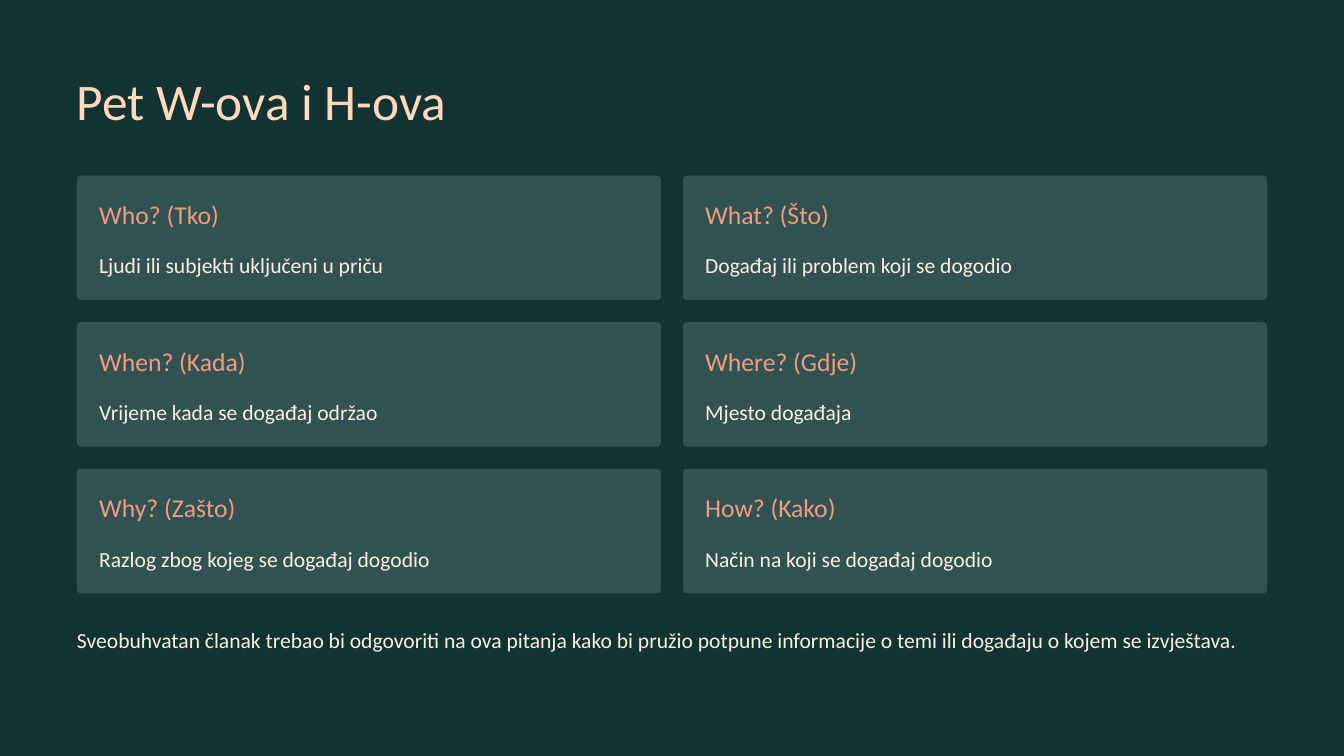
from collections import namedtuple

from pptx import Presentation
from pptx.dml.color import RGBColor
from pptx.enum.shapes import MSO_SHAPE
from pptx.util import Pt

Box = namedtuple("Box", "left top width height")

COLOURS = {
    "background": "123332",
    "card": "315251",
    "title": "FFD9BE",
    "heading": "EF9C82",
    "body": "F9EEE7",
}

FORMATS = {
    "title": {"size": Pt(44), "name": "Calibri"},
    "heading": {"size": Pt(22), "name": "Calibri"},
    "body": {"size": Pt(18.5), "name": "Calibri"},
}

LINE_HEIGHTS = {"title": 55, "heading": 27.5, "body": 30}

QUESTIONS = [
    ("Who? (Tko)", "Ljudi ili subjekti uključeni u priču"),
    ("What? (Što)", "Događaj ili problem koji se dogodio"),
    ("When? (Kada)", "Vrijeme kada se događaj održao"),
    ("Where? (Gdje)", "Mjesto događaja"),
    ("Why? (Zašto)", "Razlog zbog kojeg se događaj dogodio"),
    ("How? (Kako)", "Način na koji se događaj dogodio"),
]

SUMMARY = (
    "Sveobuhvatan članak trebao bi odgovoriti na ova pitanja kako bi pružio "
    "potpune informacije o temi ili događaju o kojem se izvještava."
)

COLUMNS = 2
GAP = 19
PADDING = 19


def colour(name):
    return RGBColor.from_string(COLOURS[name])


def in_points(box):
    return [Pt(length) for length in box]


def add_text(page, box, text, style, wrap=False):
    frame = page.shapes.add_textbox(*in_points(box)).text_frame
    for side in ("left", "top", "right", "bottom"):
        setattr(frame, f"margin_{side}", 0)
    frame.word_wrap = wrap
    para = frame.paragraphs[0]
    para.line_spacing = Pt(LINE_HEIGHTS[style])
    span = para.add_run()
    span.text = text
    for attribute, value in FORMATS[style].items():
        setattr(span.font, attribute, value)
    span.font.color.rgb = colour(style)


def add_card(page, box, heading, body):
    card = page.shapes.add_shape(MSO_SHAPE.ROUNDED_RECTANGLE, *in_points(box))
    card.adjustments[0] = 0.03
    card.shadow.inherit = False
    card.fill.solid()
    card.fill.fore_color.rgb = colour("card")
    card.line.fill.background()
    left = box.left + PADDING
    add_text(page, Box(left, box.top + PADDING, 222, 27.5), heading, "heading")
    add_text(page, Box(left, box.top + 58, box.width - 2 * PADDING, 30), body, "body")


def add_question_grid(page, box):
    rows = len(QUESTIONS) // COLUMNS
    width = (box.width - GAP * (COLUMNS - 1)) / COLUMNS
    height = (box.height - GAP * (rows - 1)) / rows
    for index, (heading, body) in enumerate(QUESTIONS):
        row, column = divmod(index, COLUMNS)
        left = box.left + column * (width + GAP)
        top = box.top + row * (height + GAP)
        add_card(page, Box(left, top, width, height), heading, body)


def main():
    deck = Presentation()
    deck.slide_width, deck.slide_height = Pt(1152), Pt(648)
    page = deck.slides.add_slide(deck.slide_layouts[6])
    page.background.fill.solid()
    page.background.fill.fore_color.rgb = colour("background")
    add_text(page, Box(66, 57.5, 444, 55), "Pet W-ova i H-ova", "title")
    add_question_grid(page, Box(66, 150.5, 1020, 358))
    add_text(page, Box(66, 530, 1020, 60), SUMMARY, "body", wrap=True)
    deck.save("out.pptx")


if __name__ == "__main__":
    main()
